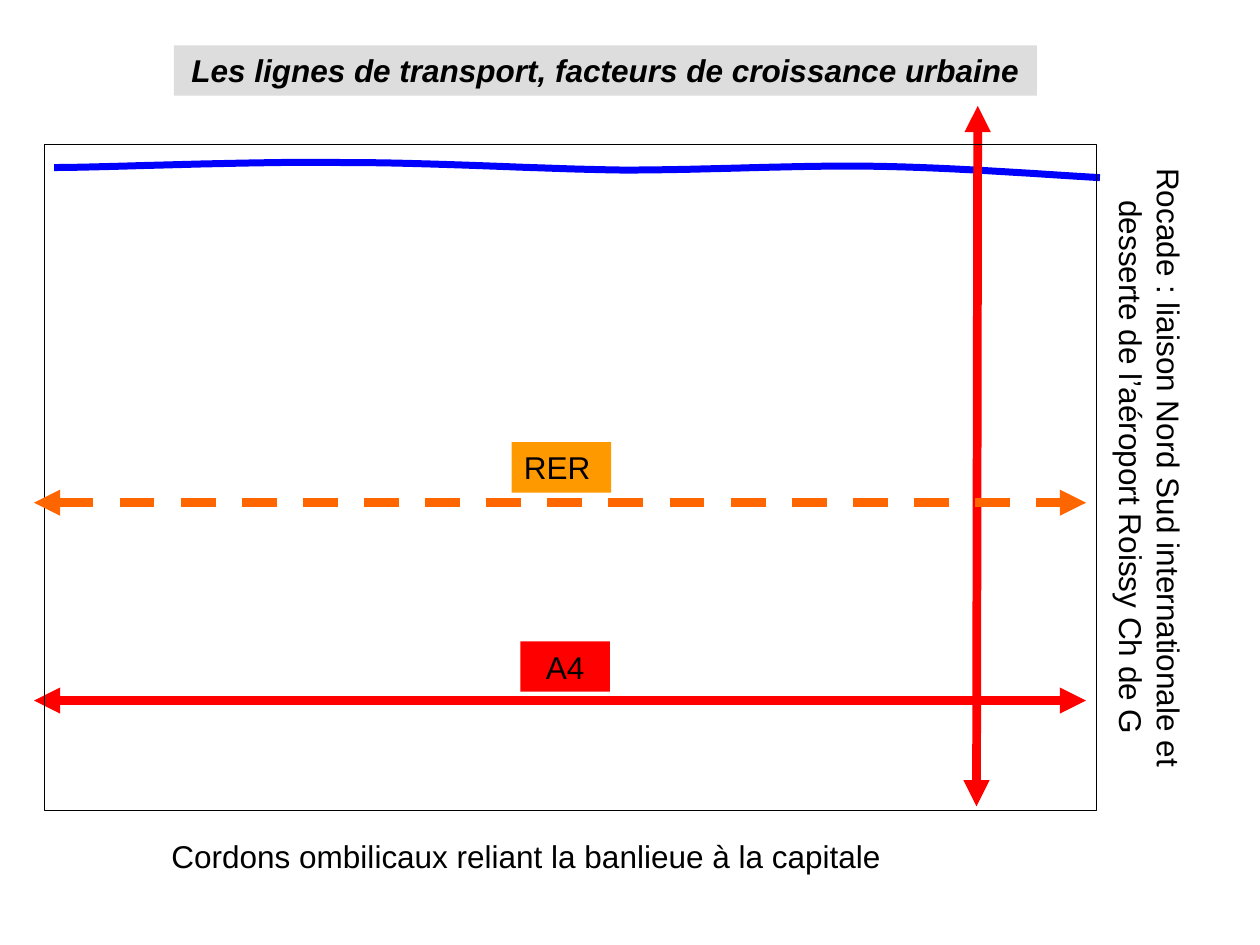
from lxml.etree import SubElement
from pptx import Presentation
from pptx.dml.color import RGBColor
from pptx.enum.dml import MSO_LINE
from pptx.enum.shapes import MSO_CONNECTOR, MSO_SHAPE
from pptx.enum.text import MSO_ANCHOR, PP_ALIGN
from pptx.oxml.ns import qn
from pptx.util import Inches, Pt

COLORS = {"river": "0000FF", "road": "FF0000", "rail": "FF6600", "rail label": "FF9900",
          "title": "DDDDDD", "black": "000000"}
FONT, TEXT_SIZE = "Arial", 18
LINE_HEIGHT = 0.4
MAP_FRAME = (0.35, 1.15, 8.35, 5.28)
MAP_LEFT, MAP_TOP, MAP_WIDTH, MAP_HEIGHT = MAP_FRAME

# Start point, then cubic curves as (control, control, end)
RIVER_START = (0.43, 1.33)
RIVER_CURVES = [
    ((0.81, 1.33), (1.96, 1.28), (2.71, 1.29)),
    ((3.46, 1.29), (4.23, 1.34), (4.94, 1.35)),
    ((5.64, 1.35), (6.32, 1.31), (6.95, 1.32)),
    ((7.59, 1.33), (8.36, 1.39), (8.73, 1.41)),
]
CURVE_STEPS = 16

ROUTE_LEFT = MAP_LEFT - 0.08
ROUTE_RIGHT = ROUTE_LEFT + MAP_WIDTH
RING_ROAD = ((7.76, 0.84), (7.75, 6.4), "road", False)
MOTORWAY = ((ROUTE_LEFT, 5.56), (ROUTE_RIGHT, 5.56), "road", False)
RAILWAY = ((ROUTE_LEFT, 3.99), (ROUTE_RIGHT, 3.99), "rail", True)

# Text, (left, top, width, height), fill, alignment, bold italic, rotation
LABELS = [
    ("Rocade : liaison Nord Sud internationale et desserte de l’aéroport Roissy Ch de G",
     (6.49, 3.36, MAP_HEIGHT, 0.7), None, PP_ALIGN.CENTER, False, 90),
    ("A4", (4.13, 5.09, 0.71, LINE_HEIGHT), "road", PP_ALIGN.CENTER, False, 0),
    ("RER", (4.06, 3.51, 0.79, LINE_HEIGHT), "rail label", PP_ALIGN.LEFT, False, 0),
    ("Les lignes de transport, facteurs de croissance urbaine",
     (1.38, 0.36, 6.85, LINE_HEIGHT), "title", PP_ALIGN.CENTER, True, 0),
    ("Cordons ombilicaux reliant la banlieue à la capitale",
     (0.83, 6.59, 6.69, LINE_HEIGHT), None, PP_ALIGN.CENTER, False, 0),
]


def color(name):
    return RGBColor.from_string(COLORS[name])


def set_line(shape, name, width):
    shape.line.color.rgb = color(name)
    shape.line.width = Pt(width)


def river_points():
    """Sample the cubic curves of the river, in slide units."""
    start = RIVER_START
    for first, second, end in RIVER_CURVES:
        for step in range(1, CURVE_STEPS + 1):
            t = step / CURVE_STEPS
            weights = ((1 - t) ** 3, 3 * t * (1 - t) ** 2, 3 * t * t * (1 - t), t ** 3)
            yield tuple(Inches(sum(weight * point[axis] for weight, point
                                   in zip(weights, (start, first, second, end))))
                        for axis in (0, 1))
        start = end


def add_river(page):
    builder = page.shapes.build_freeform(*map(Inches, RIVER_START))
    builder.add_line_segments(list(river_points()), close=False)
    river = builder.convert_to_shape()
    river.shadow.inherit = False
    river.fill.background()
    set_line(river, "river", 4)


def add_route(page, start, end, name, dashed):
    """Draw a double-headed arrow."""
    route = page.shapes.add_connector(MSO_CONNECTOR.STRAIGHT, *map(Inches, start + end))
    set_line(route, name, 5)
    if dashed:
        route.line.dash_style = MSO_LINE.DASH
    line = route.line._get_or_add_ln()
    for end_tag in ("a:headEnd", "a:tailEnd"):
        SubElement(line, qn(end_tag), type="triangle")
    SubElement(route._element.spPr, qn("a:effectLst"))


def add_frame(page):
    frame = page.shapes.add_shape(MSO_SHAPE.RECTANGLE, *map(Inches, MAP_FRAME))
    frame.shadow.inherit = False
    frame.fill.background()
    set_line(frame, "black", 0.5)


def add_label(page, text, place, fill, alignment, emphasis, rotation):
    area = [Inches(length) for length in place]
    if fill:
        box = page.shapes.add_shape(MSO_SHAPE.RECTANGLE, *area)
        box.shadow.inherit = False
        box.fill.solid()
        box.fill.fore_color.rgb = color(fill)
        box.line.fill.background()
    else:
        box = page.shapes.add_textbox(*area)
    box.rotation = rotation
    frame = box.text_frame
    frame.word_wrap = True
    frame.vertical_anchor = MSO_ANCHOR.TOP
    frame.text = text
    para = frame.paragraphs[0]
    para.alignment = alignment
    font = para.runs[0].font
    font.name, font.size = FONT, Pt(TEXT_SIZE)
    font.bold = font.italic = emphasis
    font.color.rgb = color("black")


def main():
    deck = Presentation()
    deck.slide_width, deck.slide_height = Inches(10), Inches(7.5)
    page = deck.slides.add_slide(deck.slide_layouts[6])
    add_river(page)
    add_route(page, *RING_ROAD)
    add_route(page, *MOTORWAY)
    add_frame(page)
    add_route(page, *RAILWAY)
    for label in LABELS:
        add_label(page, *label)
    deck.save("out.pptx")


if __name__ == "__main__":
    main()
